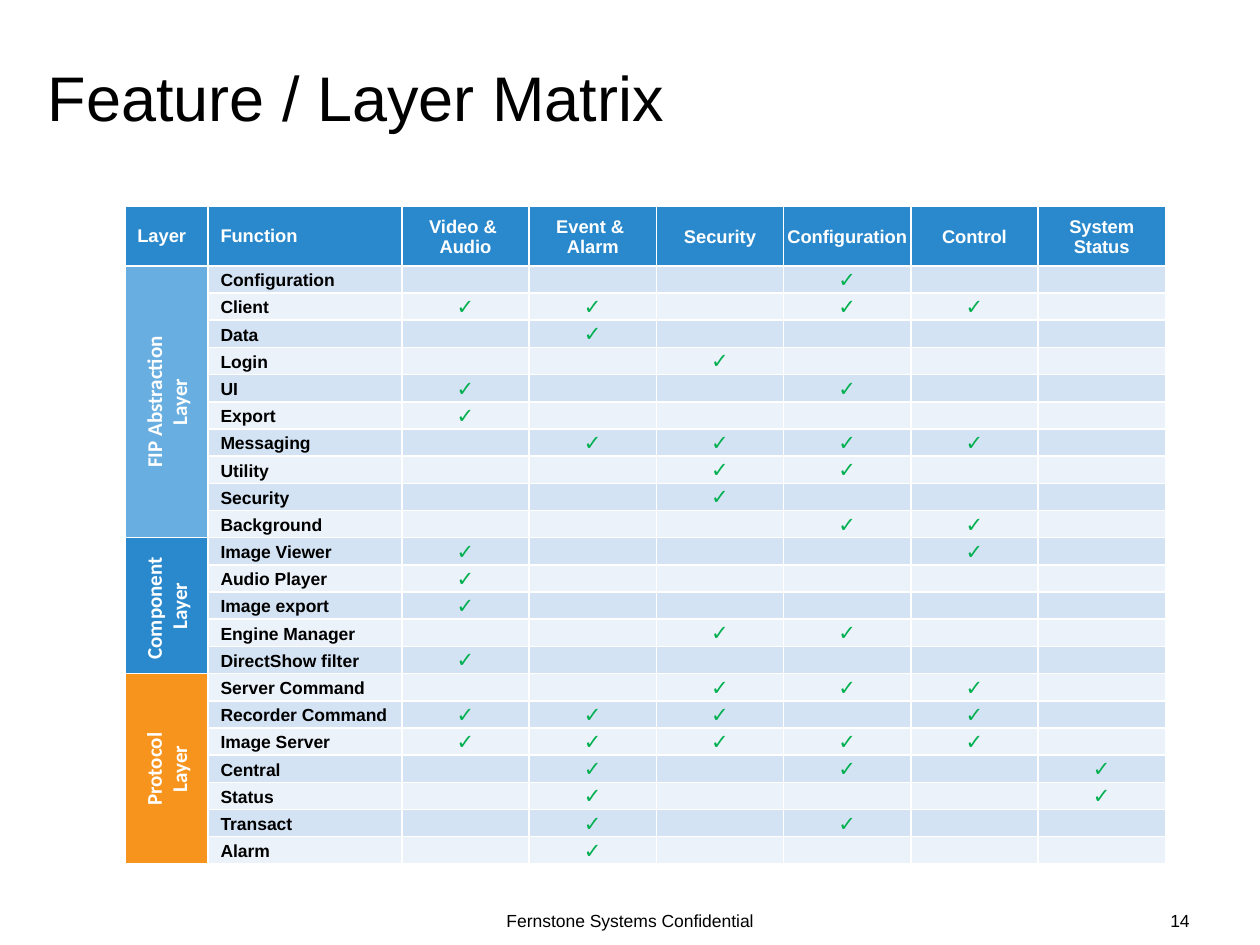
"""Build the feature and layer matrix slide."""
from typing import NamedTuple

from lxml import etree
from pptx import Presentation
from pptx.dml.color import RGBColor
from pptx.enum.text import MSO_ANCHOR, PP_ALIGN
from pptx.oxml.ns import qn
from pptx.util import Inches, Pt

LEFT, CENTER, RIGHT = PP_ALIGN.LEFT, PP_ALIGN.CENTER, PP_ALIGN.RIGHT
MIDDLE, BOTTOM = MSO_ANCHOR.MIDDLE, MSO_ANCHOR.BOTTOM

COLORS = {
    "black": "000000", "white": "FFFFFF", "blue": "2A89CC", "sky": "68AEE0",
    "orange": "F7941E", "check": "00B050", "odd": "D4E3F3", "even": "EBF2F9",
}
TABLE_LEFT, TABLE_TOP, TABLE_HEIGHT = 0.99, 1.64, 5.22
COLUMN_WIDTHS = [0.66, 1.54] + [1.01] * 6
HEADER_HEIGHT, LABEL_HEIGHT = 0.47, 0.5
WIDE_MARGINS = (0.1, 0.05, 0.1, 0.05)
NAME_MARGINS = (0.1, 0.02, 0.1, 0.02)
TIGHT_MARGINS = (0.01, 0.01, 0.01, 0)
HEADERS = ["Layer", "Function", "Video & \vAudio", "Event & \vAlarm", "Security",
           "Configuration", "Control", "System\vStatus"]


class TextStyle(NamedTuple):
    size: float
    font: str
    color: str
    bold: bool = False
    align: PP_ALIGN = LEFT


class Layer(NamedTuple):
    label: str
    color: str
    label_width: float
    functions: list[tuple[str, str]]


HEADER_NAME = TextStyle(10.5, "Arial", "white", True)
HEADER_FEATURE = HEADER_NAME._replace(align=CENTER)
FUNCTION_NAME = TextStyle(10, "Arial", "black", True)
CHECK = TextStyle(12, "Calibri", "check", True, CENTER)
LAYER_LABEL = TextStyle(12, "Calibri", "white", True, CENTER)
TITLE = TextStyle(36, "Arial", "black")
FOOTER = TextStyle(10, "Arial", "black", align=CENTER)

LAYERS = [
    Layer("FIP Abstraction\vLayer", "sky", 2.18, [
        ("Configuration", "...✓.."), ("Client", "✓✓.✓✓."), ("Data", ".✓...."),
        ("Login", "..✓..."), ("UI", "✓..✓.."), ("Export", "✓....."),
        ("Messaging", ".✓✓✓✓."), ("Utility", "..✓✓.."), ("Security", "..✓..."),
        ("Background", "...✓✓."),
    ]),
    Layer("Component \vLayer", "blue", 1.16, [
        ("Image Viewer", "✓...✓."), ("Audio Player", "✓....."),
        ("Image export", "✓....."), ("Engine Manager", "..✓✓.."),
        ("DirectShow filter", "✓....."),
    ]),
    Layer("Protocol\vLayer", "orange", 1.46, [
        ("Server Command", "..✓✓✓."), ("Recorder Command", "✓✓✓.✓."),
        ("Image Server", "✓✓✓✓✓."), ("Central", ".✓.✓.✓"), ("Status", ".✓...✓"),
        ("Transact", ".✓.✓.."), ("Alarm", ".✓...."),
    ]),
]
ROW_COUNT = sum(len(layer.functions) for layer in LAYERS)
ROW_HEIGHT = (TABLE_HEIGHT - HEADER_HEIGHT) / ROW_COUNT


def color_of(name: str) -> RGBColor:
    return RGBColor.from_string(COLORS[name])


def write_text(text_frame, text: str, style: TextStyle) -> None:
    text_frame.text = text
    paragraph = text_frame.paragraphs[0]
    paragraph.alignment = style.align
    formats = {"size": Pt(style.size), "name": style.font, "bold": style.bold}
    for run in paragraph.runs:
        for attribute, value in formats.items():
            setattr(run.font, attribute, value)
        run.font.color.rgb = color_of(style.color)


def set_margins(target, margins: tuple) -> None:
    for side, margin in zip(("left", "top", "right", "bottom"), margins):
        setattr(target, f"margin_{side}", Inches(margin))


def add_borders(cell) -> None:
    properties = cell._tc.get_or_add_tcPr()
    for index, tag in enumerate(("a:lnL", "a:lnR", "a:lnT", "a:lnB")):
        line = etree.Element(qn(tag), w=str(Pt(1)))
        fill = etree.SubElement(line, qn("a:solidFill"))
        etree.SubElement(fill, qn("a:srgbClr"), val=COLORS["white"])
        properties.insert(index, line)


def fill_cell(cell, color: str, text: str = "", style: TextStyle = FUNCTION_NAME,
              margins: tuple = TIGHT_MARGINS, anchor: MSO_ANCHOR = BOTTOM) -> None:
    set_margins(cell, margins)
    cell.vertical_anchor = anchor
    cell.fill.solid()
    cell.fill.fore_color.rgb = color_of(color)
    add_borders(cell)
    if text:
        write_text(cell.text_frame, text, style)
    else:
        paragraph = cell.text_frame.paragraphs[0]
        etree.SubElement(paragraph._p, qn("a:endParaRPr"), sz="1000")


def add_text(slide, text: str, style: TextStyle, box: tuple,
             rotation: float = 0) -> None:
    shape = slide.shapes.add_textbox(*map(Inches, box))
    shape.rotation = rotation
    shape.text_frame.word_wrap = True
    write_text(shape.text_frame, text, style)


def add_layer_label(slide, layer: Layer, first_row: int) -> None:
    middle_row = first_row - 1 + len(layer.functions) / 2
    center_x = TABLE_LEFT + COLUMN_WIDTHS[0] / 2
    center_y = TABLE_TOP + HEADER_HEIGHT + middle_row * ROW_HEIGHT
    box = (center_x - layer.label_width / 2, center_y - LABEL_HEIGHT / 2,
           layer.label_width, LABEL_HEIGHT)
    add_text(slide, layer.label, LAYER_LABEL, box, rotation=270)


def add_matrix(slide) -> None:
    table = slide.shapes.add_table(
        ROW_COUNT + 1, len(HEADERS), Inches(TABLE_LEFT), Inches(TABLE_TOP),
        Inches(sum(COLUMN_WIDTHS)), Inches(TABLE_HEIGHT)).table
    table.first_row = table.horz_banding = False
    for column, width in zip(table.columns, COLUMN_WIDTHS):
        column.width = Inches(width)
    for index, row in enumerate(table.rows):
        row.height = Inches(ROW_HEIGHT if index else HEADER_HEIGHT)
    for index, header in enumerate(HEADERS):
        style, margins = ((HEADER_NAME, WIDE_MARGINS) if index < 2
                          else (HEADER_FEATURE, TIGHT_MARGINS))
        fill_cell(table.cell(0, index), "blue", header, style, margins, MIDDLE)

    first_row = 1
    for layer in LAYERS:
        last_row = first_row + len(layer.functions) - 1
        for row, (name, marks) in enumerate(layer.functions, first_row):
            band = "odd" if row % 2 else "even"
            fill_cell(table.cell(row, 0), layer.color)
            fill_cell(table.cell(row, 1), band, name, FUNCTION_NAME, NAME_MARGINS)
            for column, mark in enumerate(marks, 2):
                fill_cell(table.cell(row, column), band, mark.strip("."), CHECK)
        table.cell(first_row, 0).merge(table.cell(last_row, 0))
        add_layer_label(slide, layer, first_row)
        first_row = last_row + 1


def add_title(slide) -> None:
    title = slide.shapes.title
    box = {"left": 0.28, "top": 0.3, "width": 8.11, "height": 0.93}
    for attribute, value in box.items():
        setattr(title, attribute, Inches(value))
    set_margins(title.text_frame, (0.1, 0, 0.1, 0))
    title.text_frame.vertical_anchor = MIDDLE
    write_text(title.text_frame, "Feature / Layer Matrix", TITLE)


def main() -> None:
    presentation = Presentation()
    presentation.slide_width, presentation.slide_height = Inches(10), Inches(7.5)
    slide = presentation.slides.add_slide(presentation.slide_layouts[5])
    add_title(slide)
    add_matrix(slide)
    add_text(slide, "Fernstone Systems Confidential", FOOTER,
             (3.7, 7.17, 2.6, 0.27))
    add_text(slide, "14", FOOTER._replace(align=RIGHT),
             (9.04, 7.17, 0.5, 0.27))
    presentation.save("out.pptx")


if __name__ == "__main__":
    main()
